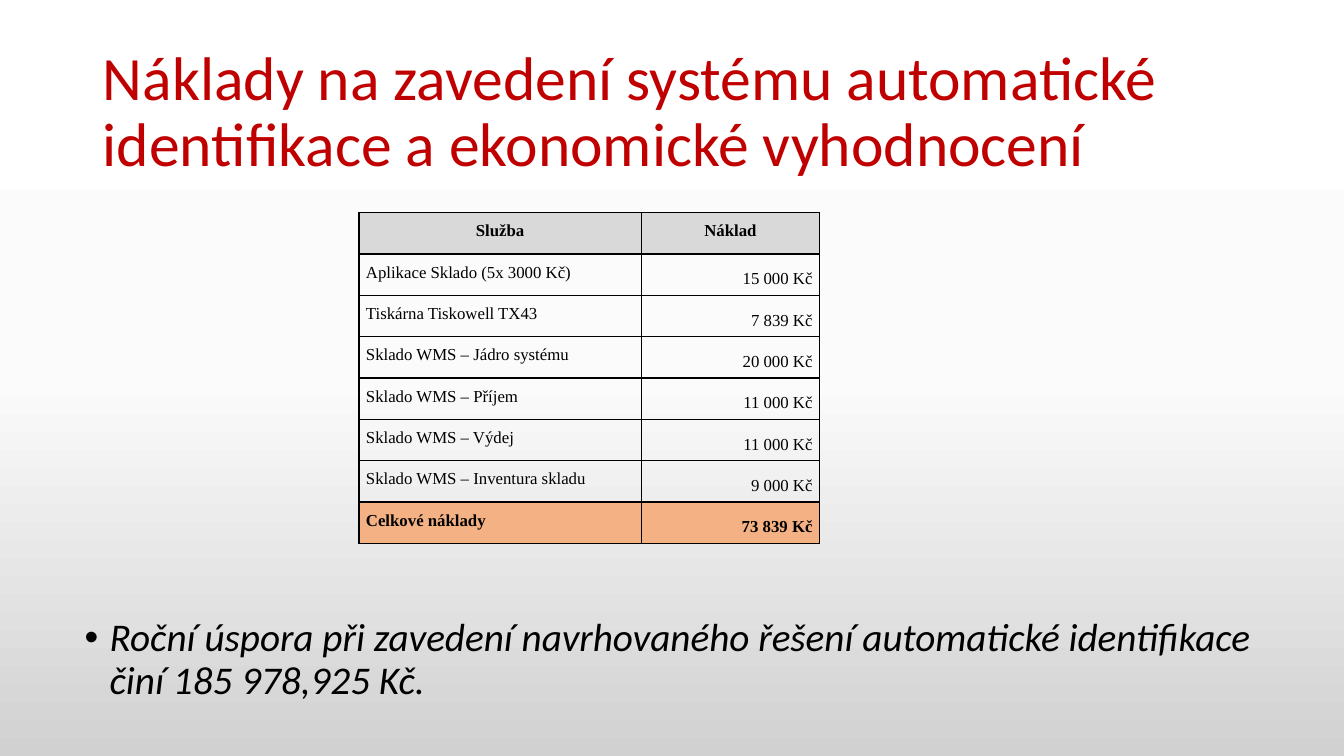
from copy import deepcopy

from lxml.etree import SubElement
from pptx import Presentation
from pptx.dml.color import RGBColor
from pptx.enum.text import MSO_ANCHOR, MSO_AUTO_SIZE, PP_ALIGN
from pptx.oxml import parse_xml
from pptx.oxml.ns import nsdecls, qn
from pptx.util import Inches, Pt

TITLE = "Náklady na zavedení systému automatické identifikace a ekonomické vyhodnocení"
SAVING = "Roční úspora při zavedení navrhovaného řešení automatické identifikace činí 185 978,925 Kč."
COSTS = [
    ("Služba", "Náklad"),
    ("Aplikace Sklado (5x 3000 Kč)", "15 000 Kč"),
    ("Tiskárna Tiskowell TX43", "7 839 Kč"),
    ("Sklado WMS – Jádro systému", "20 000 Kč"),
    ("Sklado WMS – Příjem", "11 000 Kč"),
    ("Sklado WMS – Výdej", "11 000 Kč"),
    ("Sklado WMS – Inventura skladu", "9 000 Kč"),
    ("Celkové náklady", "73 839 Kč"),
]
COLUMN_WIDTHS = [2.8, 1.77]
ROW_HEIGHT = 0.41
COLORS = {"title": "C00000", "text": "000000", "header": "D9D9D9", "total": "F4B183"}
BACKDROP = [(0, "FFFFFF"), (0.5, "FBFBFB"), (1, "D1D1D1")]


def write(frame, text, size, font="Calibri", color="text", bold=False, italic=False,
          align=PP_ALIGN.LEFT, spacing=0.9, bullet=None):
    frame.word_wrap = True
    para = frame.paragraphs[0]
    if bullet:
        properties = para._p.get_or_add_pPr()
        properties.set("marL", str(Inches(0.25)))
        properties.set("indent", str(Inches(-0.25)))
        SubElement(properties, qn("a:buFont")).set("typeface", "Arial")
        SubElement(properties, qn("a:buChar")).set("char", bullet)
    para.alignment = align
    para.line_spacing = spacing
    span = para.add_run()
    span.text = text
    span.font.size = Pt(size)
    span.font.name = font
    span.font.bold = bold
    span.font.italic = italic
    span.font.color.rgb = RGBColor.from_string(COLORS[color])


def draw_borders(cell, **widths):
    properties = cell._tc.get_or_add_tcPr()
    for position, side in enumerate("LRTB"):
        properties.insert(position, parse_xml(
            f'<a:ln{side} {nsdecls("a")} w="{Pt(widths.get(side, 1))}"><a:solidFill>'
            f'<a:srgbClr val="{COLORS["text"]}"/></a:solidFill></a:ln{side}>'))


def paint_background(page):
    fill = page.background.fill
    fill.gradient()
    fill.gradient_angle = 270
    stops = page._element.find(".//" + qn("a:gsLst"))
    stops.insert(1, deepcopy(stops[0]))
    for stop, (position, color) in zip(fill.gradient_stops, BACKDROP):
        stop.position = position
        stop.color.rgb = RGBColor.from_string(color)


def add_cost_table(page):
    last = len(COSTS) - 1
    table = page.shapes.add_table(
        len(COSTS), len(COLUMN_WIDTHS), Inches(3.56), Inches(2.11),
        Inches(sum(COLUMN_WIDTHS)), Inches(ROW_HEIGHT * len(COSTS))).table
    table.horz_banding = False
    for column, width in zip(table.columns, COLUMN_WIDTHS):
        column.width = Inches(width)
    for row_index, row in enumerate(COSTS):
        table.rows[row_index].height = Inches(ROW_HEIGHT)
        shade = {0: "header", last: "total"}.get(row_index)
        for column_index, text in enumerate(row):
            cell = table.cell(row_index, column_index)
            cell.margin_left = cell.margin_right = Inches(0.07)
            cell.margin_top = cell.margin_bottom = 0
            is_amount = row_index > 0 and column_index == 1
            cell.vertical_anchor = MSO_ANCHOR.MIDDLE if is_amount else MSO_ANCHOR.TOP
            if row_index == 0:
                align = PP_ALIGN.CENTER
            else:
                align = PP_ALIGN.RIGHT if is_amount else PP_ALIGN.LEFT
            write(cell.text_frame, text, 12, font="Times New Roman",
                  bold=shade is not None, align=align, spacing=1.5)
            if shade:
                cell.fill.solid()
                cell.fill.fore_color.rgb = RGBColor.from_string(COLORS[shade])
            else:
                cell.fill.background()
            draw_borders(cell, T=1.5 if row_index == last else 1,
                         B=1.5 if row_index == last - 1 else 1)


def main():
    deck = Presentation()
    deck.slide_width, deck.slide_height = Inches(13.33), Inches(7.5)
    page = deck.slides.add_slide(deck.slide_layouts[5])
    paint_background(page)

    title = page.shapes.title
    title.left, title.top = Inches(0.92), Inches(0.4)
    title.width, title.height = Inches(11.5), Inches(1.45)
    title.text_frame.auto_size = MSO_AUTO_SIZE.NONE
    title.text_frame.vertical_anchor = MSO_ANCHOR.MIDDLE
    write(title.text_frame, TITLE, 44, color="title")

    add_cost_table(page)

    box = page.shapes.add_textbox(Inches(0.74), Inches(6.08), Inches(12.37), Inches(0.95))
    write(box.text_frame, SAVING, 28, italic=True, bullet="•")

    deck.save("out.pptx")


if __name__ == "__main__":
    main()
